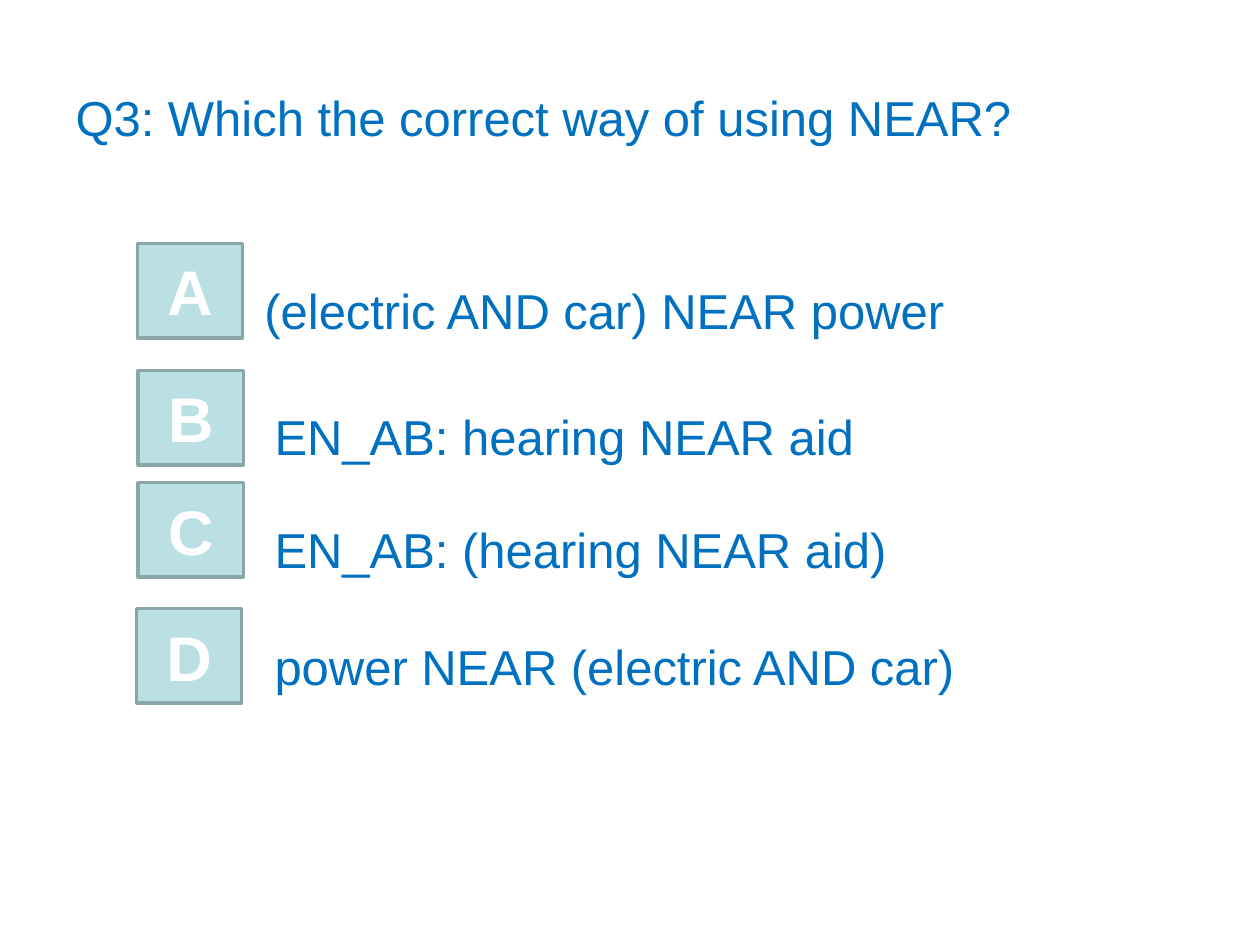
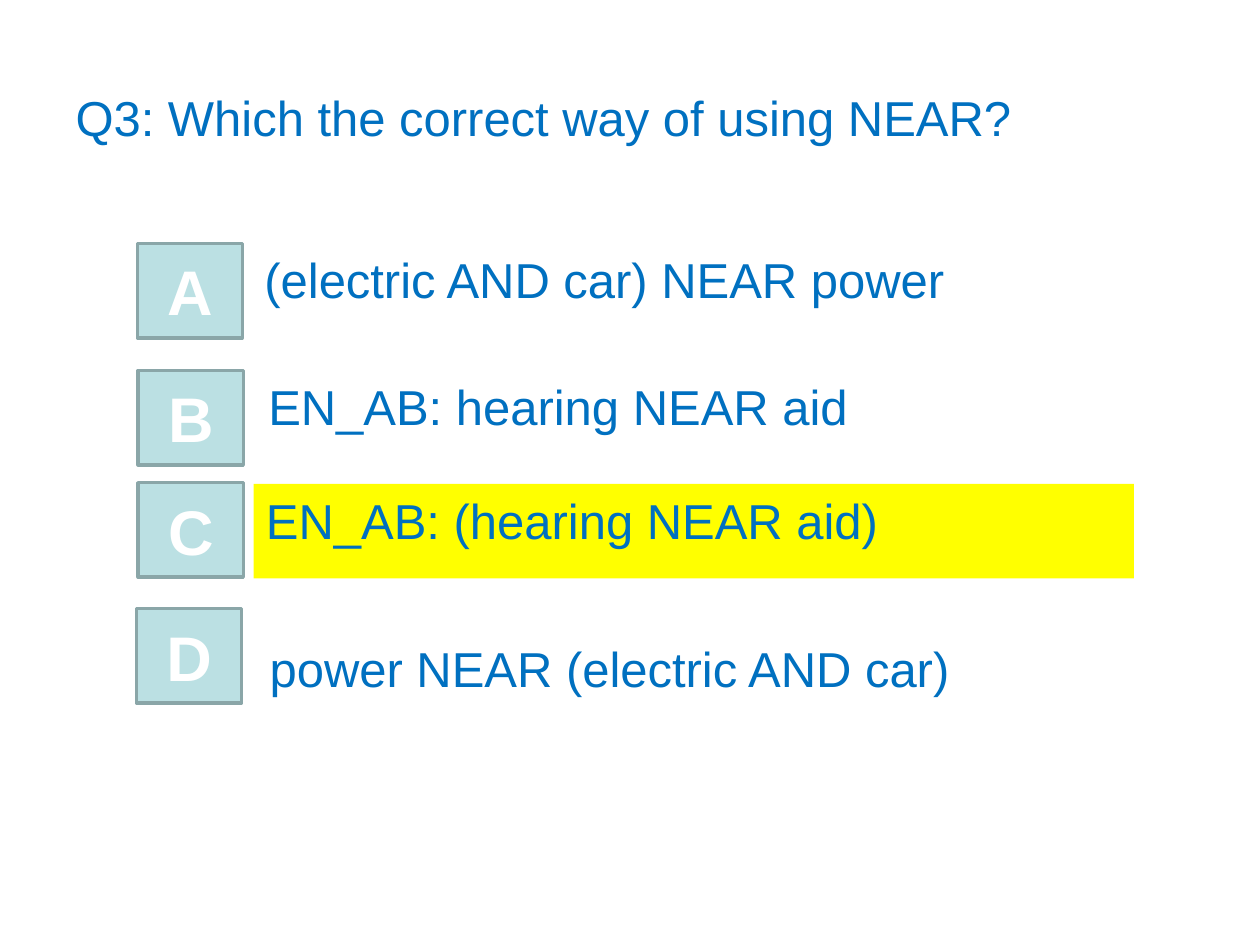
from dataclasses import dataclass
from typing import Any, Optional

from pptx import Presentation
from pptx.dml.color import RGBColor
from pptx.enum.shapes import MSO_SHAPE
from pptx.enum.text import MSO_ANCHOR, MSO_AUTO_SIZE, PP_ALIGN
from pptx.util import Pt


@dataclass(frozen=True)
class Theme:
    font: str = "Arial"
    text: RGBColor = RGBColor(0x00, 0x70, 0xC0)
    letter: RGBColor = RGBColor(0xFF, 0xFF, 0xFF)
    button: RGBColor = RGBColor(0xBB, 0xE0, 0xE3)
    button_line: RGBColor = RGBColor(0x8A, 0xA6, 0xA8)
    highlight: RGBColor = RGBColor(0xFF, 0xFF, 0x00)
    text_size: int = 28
    letter_size: int = 36


@dataclass(frozen=True)
class Box:
    left: float
    top: float
    width: float
    height: float

    def lengths(self) -> tuple:
        return Pt(self.left), Pt(self.top), Pt(self.width), Pt(self.height)


@dataclass(frozen=True)
class Button:
    letter: str
    box: Box


@dataclass(frozen=True)
class Answer:
    text: str
    box: Box
    fill: Optional[RGBColor] = None


THEME = Theme()
QUESTION = "Q3: Which the correct way of using NEAR?"
TITLE_BOX = Box(36, 21.6, 648, 90)

CAR_FIRST = "(electric AND car) NEAR power"
HEARING = "EN_AB: hearing NEAR aid"
HEARING_GROUPED = "EN_AB: (hearing NEAR aid)"
POWER_FIRST = "power NEAR (electric AND car)"

BUTTONS = [
    Button(letter, Box(left, top, 60, 54))
    for letter, left, top in (
        ("A", 78.5, 139), ("B", 79, 211.7), ("C", 79, 275.8), ("D", 78, 347.8)
    )
]

QUESTION_ANSWERS = [
    Answer(CAR_FIRST, Box(144, 157, 432, 40)),
    Answer(HEARING, Box(149.8, 229, 415, 41)),
    Answer(HEARING_GROUPED, Box(149.8, 293.6, 426, 41)),
    Answer(POWER_FIRST, Box(149.8, 360, 426, 41)),
]
SOLUTION_ANSWERS = [
    Answer(CAR_FIRST, Box(144, 139, 468, 57.6)),
    Answer(HEARING, Box(146.2, 211.7, 492, 54)),
    Answer(HEARING_GROUPED, Box(144.9, 276.5, 503, 54), THEME.highlight),
    Answer(POWER_FIRST, Box(147, 361.4, 513, 41)),
]

TEXT_FORMAT = {"name": THEME.font, "size": Pt(THEME.text_size), "bold": False}
LETTER_FORMAT = {"name": THEME.font, "size": Pt(THEME.letter_size), "bold": True}


def write_text(shape: Any, text: str, font_format: dict, color: RGBColor,
               alignment: PP_ALIGN, anchor: MSO_ANCHOR) -> None:
    frame_format = {"word_wrap": True, "auto_size": MSO_AUTO_SIZE.NONE,
                    "vertical_anchor": anchor}
    for name, value in frame_format.items():
        setattr(shape.text_frame, name, value)
    paragraph = shape.text_frame.paragraphs[0]
    paragraph.alignment = alignment
    run = paragraph.add_run()
    run.text = text
    for name, value in font_format.items():
        setattr(run.font, name, value)
    run.font.color.rgb = color


def add_title(slide: Any) -> None:
    title = slide.shapes.title
    title.left, title.top, title.width, title.height = TITLE_BOX.lengths()
    write_text(title, QUESTION, TEXT_FORMAT, THEME.text,
               PP_ALIGN.LEFT, MSO_ANCHOR.MIDDLE)


def add_button(slide: Any, button: Button) -> None:
    shape = slide.shapes.add_shape(MSO_SHAPE.ACTION_BUTTON_CUSTOM,
                                   *button.box.lengths())
    shape.shadow.inherit = False
    shape.fill.solid()
    shape.fill.fore_color.rgb = THEME.button
    shape.line.color.rgb = THEME.button_line
    shape.line.width = Pt(2)
    write_text(shape, button.letter, LETTER_FORMAT, THEME.letter,
               PP_ALIGN.CENTER, MSO_ANCHOR.MIDDLE)


def add_answer(slide: Any, answer: Answer) -> None:
    """Draw a text box, or a filled rectangle when the answer has a fill."""
    if answer.fill is None:
        shape = slide.shapes.add_textbox(*answer.box.lengths())
    else:
        shape = slide.shapes.add_shape(MSO_SHAPE.RECTANGLE, *answer.box.lengths())
        shape.shadow.inherit = False
        shape.fill.solid()
        shape.fill.fore_color.rgb = answer.fill
        shape.line.fill.background()
    write_text(shape, answer.text, TEXT_FORMAT, THEME.text,
               PP_ALIGN.LEFT, MSO_ANCHOR.TOP)


def add_quiz_slide(presentation: Any, answers: list[Answer]) -> None:
    title_only = presentation.slide_layouts.get_by_name("Title Only")
    slide = presentation.slides.add_slide(title_only)
    add_title(slide)
    for answer in answers:
        add_answer(slide, answer)
    for button in BUTTONS:
        add_button(slide, button)


def main() -> None:
    presentation = Presentation()
    presentation.slide_width, presentation.slide_height = Pt(720), Pt(540)
    for answers in (QUESTION_ANSWERS, SOLUTION_ANSWERS):
        add_quiz_slide(presentation, answers)
    presentation.save("out.pptx")


if __name__ == "__main__":
    main()
